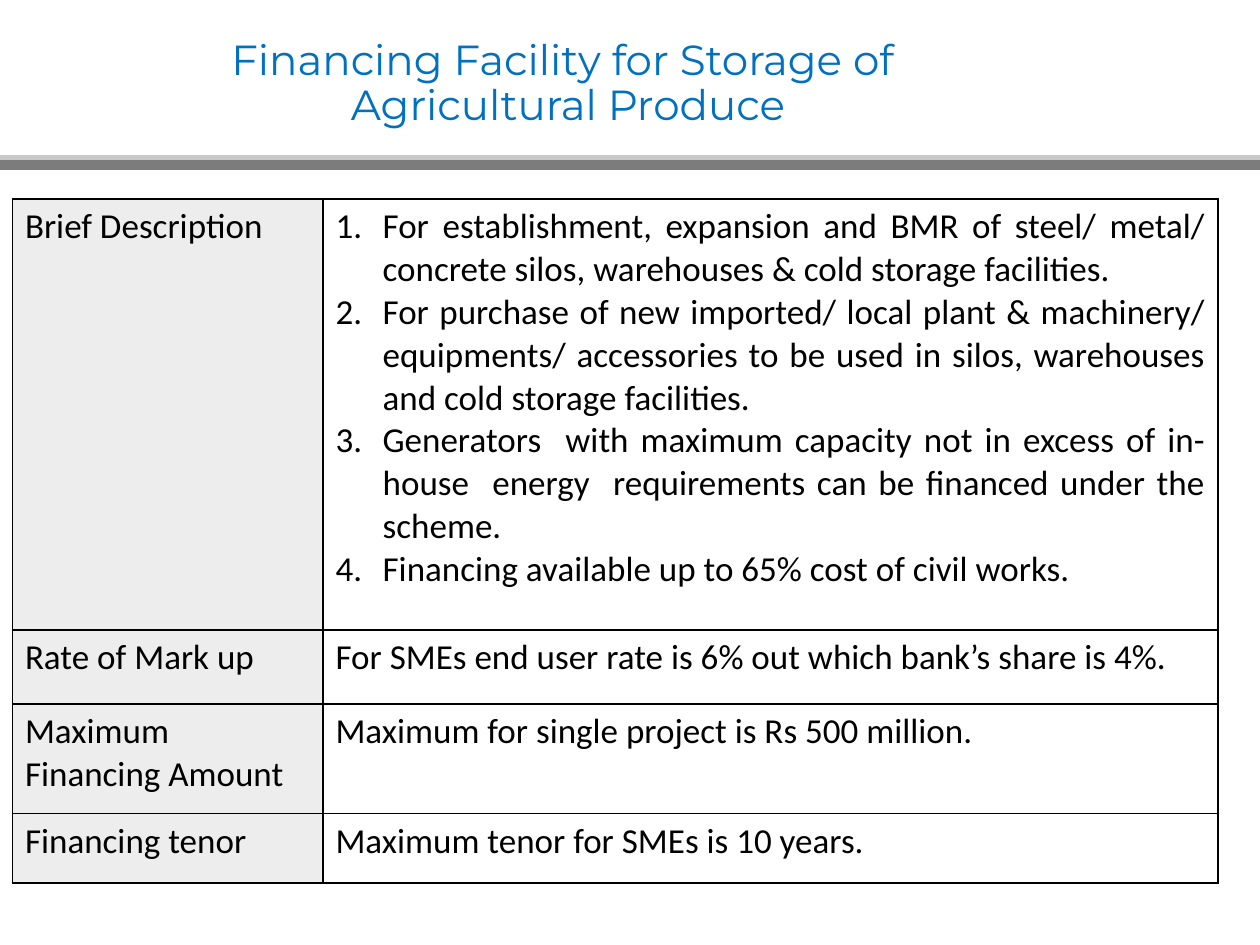
from dataclasses import dataclass

from lxml.etree import SubElement
from pptx import Presentation
from pptx.dml.color import RGBColor
from pptx.enum.shapes import MSO_CONNECTOR
from pptx.enum.text import MSO_ANCHOR, MSO_AUTO_SIZE, PP_ALIGN
from pptx.oxml import parse_xml
from pptx.oxml.ns import nsdecls, qn
from pptx.util import Cm, Pt


@dataclass(frozen=True)
class Theme:
    title_font: str = "Montserrat"
    body_font: str = "Calibri"
    title_size: int = 24
    body_size: int = 20
    rule_width: int = 6
    border_width: int = 1
    title_color: str = "0070C0"
    text_color: str = "000000"
    border_color: str = "000000"
    label_fill: str = "EDEDED"
    light_rule: str = "C9C9C9"
    dark_rule: str = "7C7C7C"


THEME = Theme()
NUMBER_INDENT = Cm(0.95)

TITLE_LINES = ["Financing Facility for Storage of ", "Agricultural Produce"]
FACILITY_TERMS = [
    ("Brief Description", [
        "For establishment, expansion and BMR of steel/ metal/ concrete silos, "
        "warehouses & cold storage facilities.",
        "For purchase of new imported/ local plant & machinery/ equipments/ "
        "accessories to be used in silos, warehouses and cold storage facilities.",
        "Generators  with maximum capacity not in excess of in-house  energy  "
        "requirements can be financed under the scheme.",
        "Financing available up to 65% cost of civil works.",
    ]),
    ("Rate of Mark up", ["For SMEs end user rate is 6% out which bank’s share is 4%."]),
    ("Maximum Financing Amount", ["Maximum for single project is Rs 500 million."]),
    ("Financing tenor", ["Maximum tenor for SMEs is 10 years."]),
]
COLUMN_WIDTHS = [Cm(6.26), Cm(18.04)]
ROW_HEIGHTS = [Cm(8.69), Cm(1.49), Cm(2.21), Cm(1.4)]


def write_text(paragraph, text, *, font=THEME.body_font, size=THEME.body_size,
               color=THEME.text_color, align=PP_ALIGN.LEFT, line_spacing=None,
               numbered=False):
    """Fill a paragraph; a newline in the text becomes a line break."""
    paragraph.alignment = align
    if line_spacing:
        paragraph.line_spacing = line_spacing
    if numbered:
        properties = paragraph._p.get_or_add_pPr()
        properties.set("marL", str(NUMBER_INDENT))
        properties.set("indent", str(-NUMBER_INDENT))
        SubElement(properties, qn("a:buFont"), typeface="+mj-lt")
        SubElement(properties, qn("a:buAutoNum"), type="arabicPeriod")
    for index, line in enumerate(text.split("\n")):
        if index:
            paragraph.add_line_break()
        run = paragraph.add_run()
        run.text = line
        run.font.name = font
        run.font.size = Pt(size)
        run.font.bold = False
        run.font.color.rgb = RGBColor.from_string(color)


def set_borders(cell):
    properties = cell._tc.get_or_add_tcPr()
    for index, side in enumerate(("lnL", "lnR", "lnT", "lnB")):
        properties.insert(index, parse_xml(
            f'<a:{side} {nsdecls("a")} w="{Pt(THEME.border_width)}"><a:solidFill>'
            f'<a:srgbClr val="{THEME.border_color}"/></a:solidFill></a:{side}>'))


def place_title(slide, left, top, width, height):
    title = slide.shapes.title
    title.left, title.top, title.width, title.height = left, top, width, height
    frame = title.text_frame
    frame.word_wrap = True
    frame.auto_size = MSO_AUTO_SIZE.NONE
    frame.vertical_anchor = MSO_ANCHOR.MIDDLE
    write_text(frame.paragraphs[0], "\n".join(TITLE_LINES), font=THEME.title_font,
               size=THEME.title_size, color=THEME.title_color,
               align=PP_ALIGN.CENTER, line_spacing=0.9)


def add_header_rules(slide, left, top, width):
    """Draw a dark rule that partly covers a light one."""
    for offset, color in ((Cm(0), THEME.light_rule), (Cm(0.1), THEME.dark_rule)):
        y = top + offset
        rule = slide.shapes.add_connector(
            MSO_CONNECTOR.STRAIGHT, left, y, left + width, y)
        rule.line.color.rgb = RGBColor.from_string(color)
        rule.line.width = Pt(THEME.rule_width)
        SubElement(rule._element.spPr, qn("a:effectLst"))


def add_terms_table(slide, left, top):
    table = slide.shapes.add_table(
        len(FACILITY_TERMS), len(COLUMN_WIDTHS), left, top,
        sum(COLUMN_WIDTHS), sum(ROW_HEIGHTS)).table
    table.first_row = table.horz_banding = False
    for column, width in zip(table.columns, COLUMN_WIDTHS):
        column.width = width
    for row, height, (label, details) in zip(table.rows, ROW_HEIGHTS, FACILITY_TERMS):
        row.height = height
        label_cell, detail_cell = row.cells
        label_cell.fill.solid()
        label_cell.fill.fore_color.rgb = RGBColor.from_string(THEME.label_fill)
        detail_cell.fill.background()
        for cell in row.cells:
            set_borders(cell)
        write_text(label_cell.text_frame.paragraphs[0], label)
        frame = detail_cell.text_frame
        for index, detail in enumerate(details):
            paragraph = frame.add_paragraph() if index else frame.paragraphs[0]
            write_text(paragraph, detail, align=PP_ALIGN.JUSTIFY,
                       numbered=len(details) > 1)


def main():
    presentation = Presentation()
    presentation.slide_width, presentation.slide_height = Cm(25.4), Cm(19.05)
    title_only = presentation.slide_layouts.get_by_name("Title Only")
    slide = presentation.slides.add_slide(title_only)
    add_header_rules(slide, Cm(0), Cm(3.23), presentation.slide_width)
    place_title(slide, Cm(0.25), Cm(0.43), Cm(22.4), Cm(2.54))
    add_terms_table(slide, Cm(0.25), Cm(4.01))
    presentation.save("out.pptx")


if __name__ == "__main__":
    main()
